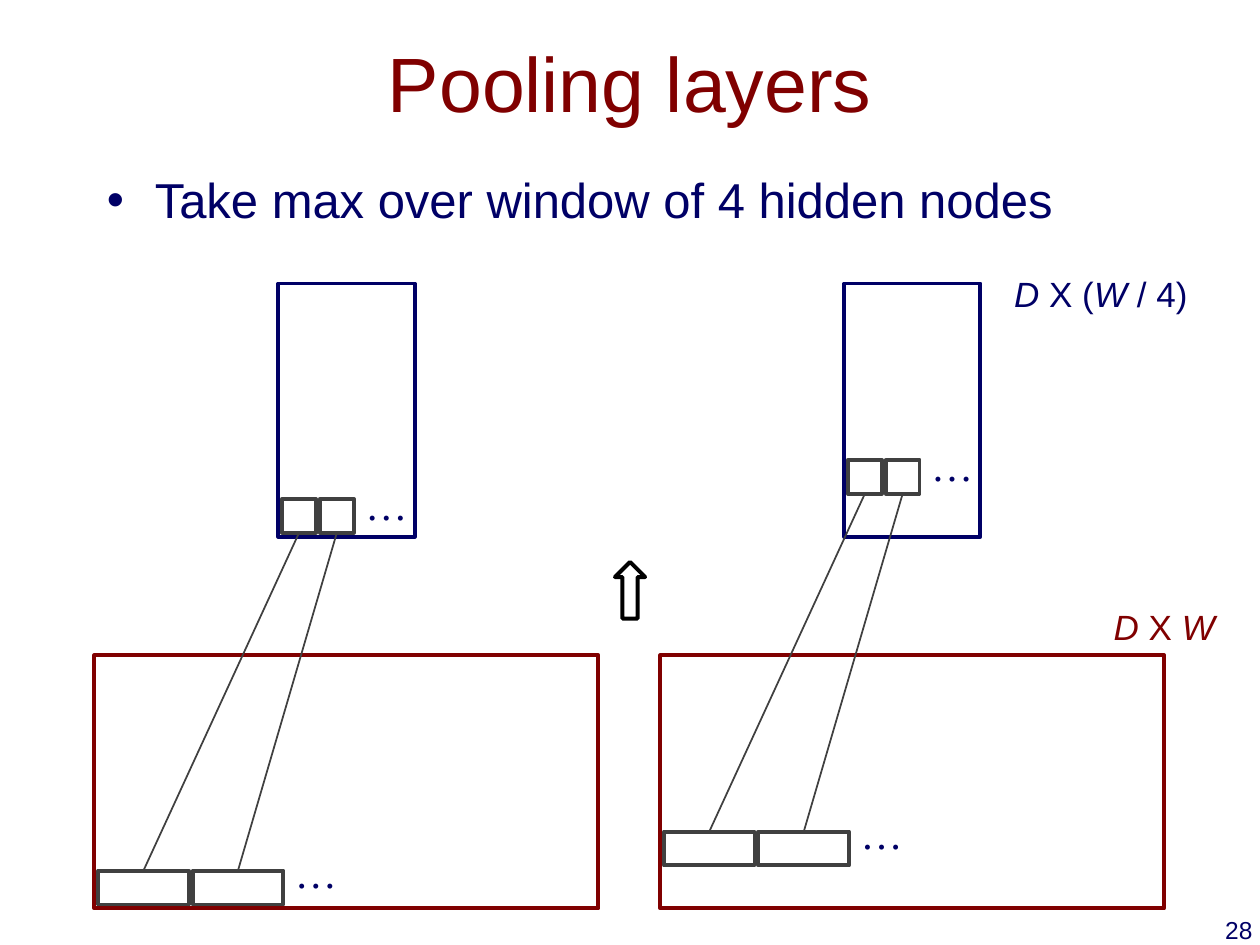
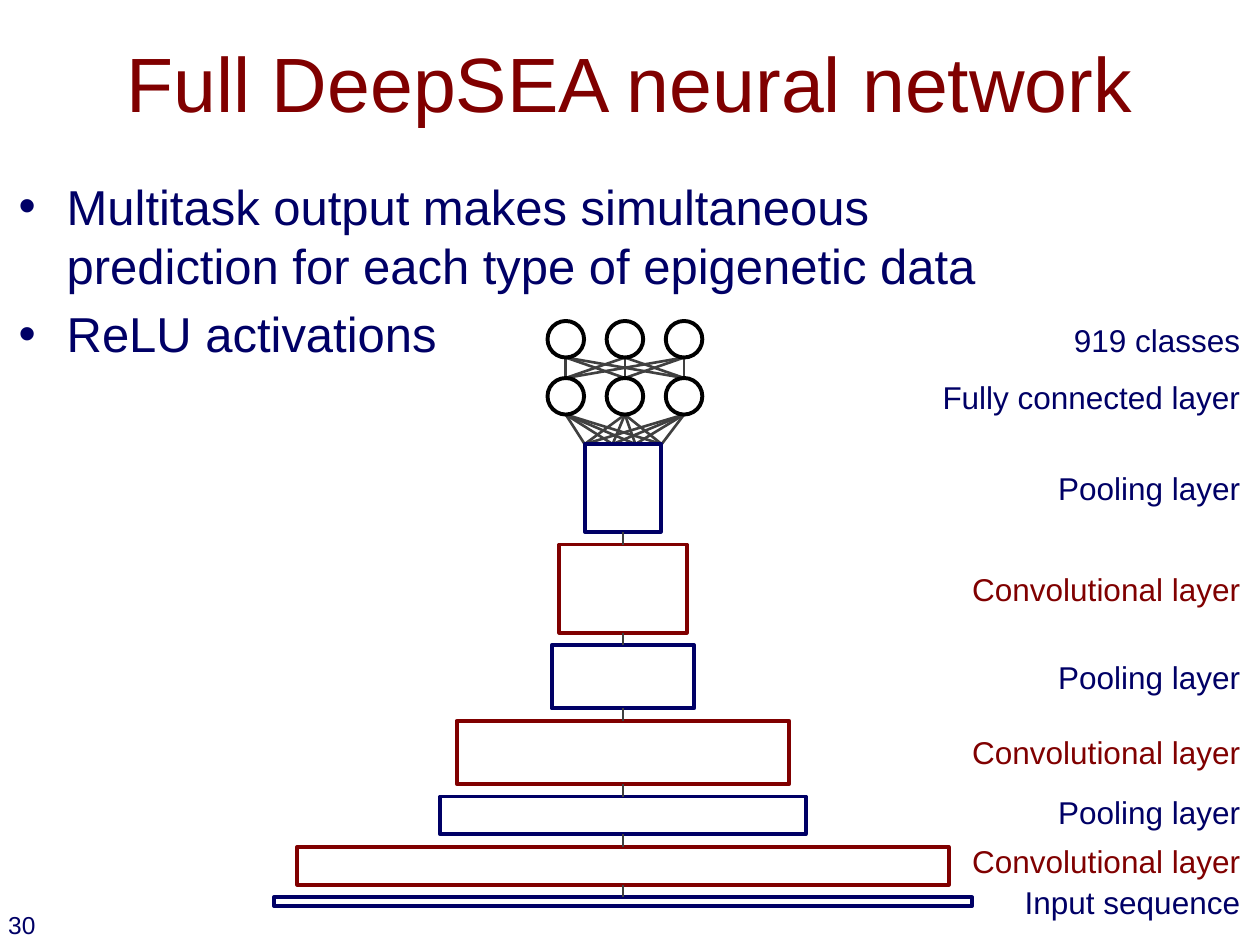
from itertools import pairwise, product

from lxml import etree
from pptx import Presentation
from pptx.dml.color import RGBColor
from pptx.enum import shapes, text
from pptx.oxml.ns import qn
from pptx.util import Pt

COLORS = {
    "maroon": "800000",
    "navy": "000066",
    "grey": "404040",
    "black": "000000",
    "white": "FFFFFF",
}
SLIDE_W, SLIDE_H = 720, 540
SANS, SERIF = "Arial", "Times New Roman"
OUTLINE = 2.25
LEFT, CENTER, RIGHT = text.PP_ALIGN.LEFT, text.PP_ALIGN.CENTER, text.PP_ALIGN.RIGHT
RECT, OVAL, UP_ARROW = (shapes.MSO_SHAPE.RECTANGLE, shapes.MSO_SHAPE.OVAL,
                        shapes.MSO_SHAPE.UP_ARROW)


def rgb(color):
    return RGBColor.from_string(COLORS[color])


def add_bullet(paragraph, indent=27.4):
    props = paragraph._p.get_or_add_pPr()
    props.set("marL", str(Pt(indent)))
    props.set("indent", str(-Pt(indent)))
    etree.SubElement(props, qn("a:buFont")).set("typeface", SANS)
    etree.SubElement(props, qn("a:buChar")).set("char", "•")


def add_text(slide, box, paragraphs, size=18, color="navy", font=SANS, align=LEFT,
             anchor=text.MSO_ANCHOR.TOP, wrap=True, bullets=False, inset=True):
    """Each paragraph is a string or a list of (words, italic) runs."""
    frame = slide.shapes.add_textbox(*map(Pt, box)).text_frame
    frame.word_wrap = wrap
    frame.vertical_anchor = anchor
    if not inset:
        frame.margin_left = frame.margin_right = 0
        frame.margin_top = frame.margin_bottom = 0
    for i, content in enumerate(paragraphs):
        paragraph = frame.paragraphs[0] if i == 0 else frame.add_paragraph()
        paragraph.alignment = align
        if bullets:
            paragraph.space_before = Pt(size * 0.2)
            add_bullet(paragraph)
        runs = [(content, False)] if isinstance(content, str) else content
        for words, italic in runs:
            run = paragraph.add_run()
            run.text = words
            run.font.size = Pt(size)
            run.font.name = font
            run.font.italic = italic
            run.font.color.rgb = rgb(color)


def add_outline(slide, kind, box, color, fill=None):
    outline = slide.shapes.add_shape(kind, *map(Pt, box))
    outline.shadow.inherit = False
    if fill:
        outline.fill.solid()
        outline.fill.fore_color.rgb = rgb(fill)
    else:
        outline.fill.background()
    outline.line.color.rgb = rgb(color)
    outline.line.width = Pt(OUTLINE)
    return outline


def add_line(slide, start=(0, 0), end=(0, 0), width=1.5):
    line = slide.shapes.add_connector(shapes.MSO_CONNECTOR.STRAIGHT,
                                      *map(Pt, (*start, *end)))
    line.line.color.rgb = rgb("grey")
    line.line.width = Pt(width)
    etree.SubElement(line._element.spPr, qn("a:effectLst"))
    return line


def join(slide, lower, upper, width=1.5):
    """Line from the top of one rectangle to the bottom of another."""
    line = add_line(slide, width=width)
    line.begin_connect(lower, 0)
    line.end_connect(upper, 2)


def start_slide(deck, title, number, number_right, number_top):
    slide = deck.slides.add_slide(deck.slide_layouts[6])
    add_text(slide, (54, 1.4, 612, 90), [title], size=44, color="maroon",
             align=CENTER, anchor=text.MSO_ANCHOR.MIDDLE)
    add_text(slide, (number_right - 20, number_top, 20, 17), [number], size=14,
             align=RIGHT, inset=False)
    return slide


def add_cells(slide, left, top, width, ellipsis_rise):
    """Two neighbouring cells of a row, followed by an ellipsis."""
    height, gap = 19.4, 2.2
    cells = [add_outline(slide, RECT, (left + i * (width + gap), top, width, height),
                         "grey") for i in range(2)]
    add_text(slide, (left + 2 * width + gap - 0.5, top - ellipsis_rise, 28, 36),
             ["…"], size=24, font=SERIF)
    return cells


def add_pooling_panel(slide, left, top, row_rise):
    """Wide input map below, narrow pooled map above, one row joined."""
    map_height, conv_width, pool_width = 144.7, 288, 77.8
    conv_top = top + 212.4
    pool_left = left + (conv_width - pool_width) / 2
    margin = 2.1
    row_offset = map_height - 21.6 - row_rise
    add_outline(slide, RECT, (left, conv_top, conv_width, map_height), "maroon")
    add_outline(slide, RECT, (pool_left, top, pool_width, map_height), "navy")
    pooled = add_cells(slide, pool_left + margin, top + row_offset, 19.4, 15.1)
    windows = add_cells(slide, left + margin, conv_top + row_offset, 51.8, 17.3)
    for window, node in zip(windows, pooled):
        join(slide, window, node, width=1)


def build_pooling(deck):
    slide = start_slide(deck, "Pooling layers", "28", 715.7, 522.7)
    add_text(slide, (54, 93.6, 612, 75), ["Take max over window of 4 hidden nodes"],
             size=28, bullets=True)
    for left, row_rise in ((54, 0), (377.3, 22.3)):
        add_pooling_panel(slide, left, 162, row_rise)
    add_outline(slide, UP_ARROW, (351.4, 321.1, 17.3, 32.4), "black")
    add_text(slide, (629.3, 342.7, 72.7, 31.7),
             [[("D", True), (" X ", False), ("W", True)]],
             size=20, color="maroon", wrap=False)
    add_text(slide, (572.4, 151.9, 114.5, 31.7),
             [[("D", True), (" X (", False), ("W ", True), ("/ 4)", False)]],
             size=20, wrap=False)


def add_layer_label(slide, label, middle, color="navy"):
    width, height, right = 240, 28.8, 715.7
    add_text(slide, (right - width, middle - height / 2, width, height), [label],
             color=color, align=RIGHT)


def add_layer_stack(slide, axis, top):
    """Layers from the last pooling layer down to the input, centred on an axis."""
    gap = 7.2
    pool, conv = ("Pooling layer", "navy"), ("Convolutional layer", "maroon")
    layers = [  # label and colour, width, height, label shift
        (pool, 43.2, 50.4, 0),
        (conv, 72.7, 50.4, 0),
        (pool, 81.4, 36, 0),
        (conv, 190.1, 36, 0),
        (pool, 208.8, 21.6, -2),
        (conv, 372.2, 21.6, -2.5),
        (("Input sequence", "navy"), 398.9, 5, 0),
    ]
    boxes = []
    for (label, color), width, height, shift in layers:
        boxes.append(add_outline(slide, RECT, (axis - width / 2, top, width, height),
                                 color))
        add_layer_label(slide, label, top + height / 2 + shift, color)
        top += height + gap
    for upper, lower in pairwise(boxes):
        join(slide, lower, upper)


def add_dense_units(slide, axis, output_top, hidden_top, pool_top):
    """Two fully connected rows of units above the layer stack."""
    diameter, pitch = 20.9, 33.8
    centers = [axis + i * pitch for i in (-1, 0, 1)]
    pool_ends = [axis + dx for dx in (-23, -7, 6, 21)]
    bands = ((output_top, centers, hidden_top), (hidden_top, pool_ends, pool_top))
    for row_top, ends, end_y in bands:
        for start_x, end_x in product(centers, ends):
            add_line(slide, (start_x, row_top + diameter), (end_x, end_y))
    for row_top, x in product((output_top, hidden_top), centers):
        add_outline(slide, OVAL, (x - diameter / 2, row_top, diameter, diameter),
                    "black", fill="white")
    add_layer_label(slide, "919 classes", output_top + diameter / 2 + 0.4)
    add_layer_label(slide, "Fully connected layer", hidden_top + diameter / 2 + 0.4)


def build_network(deck):
    slide = start_slide(deck, "Full DeepSEA neural network", "30", 20.3, 519.8)
    add_text(slide, (3.6, 97.2, 600, 89.3),
             ["Multitask output makes simultaneous prediction for each type of "
              "epigenetic data", "ReLU activations"], size=28, bullets=True)
    add_dense_units(slide, axis=357.1, output_top=183.4, hidden_top=216, pool_top=253.8)
    add_layer_stack(slide, axis=356, top=253.6)


def main():
    deck = Presentation()
    deck.slide_width, deck.slide_height = Pt(SLIDE_W), Pt(SLIDE_H)
    build_pooling(deck)
    build_network(deck)
    deck.save("out.pptx")


if __name__ == "__main__":
    main()
